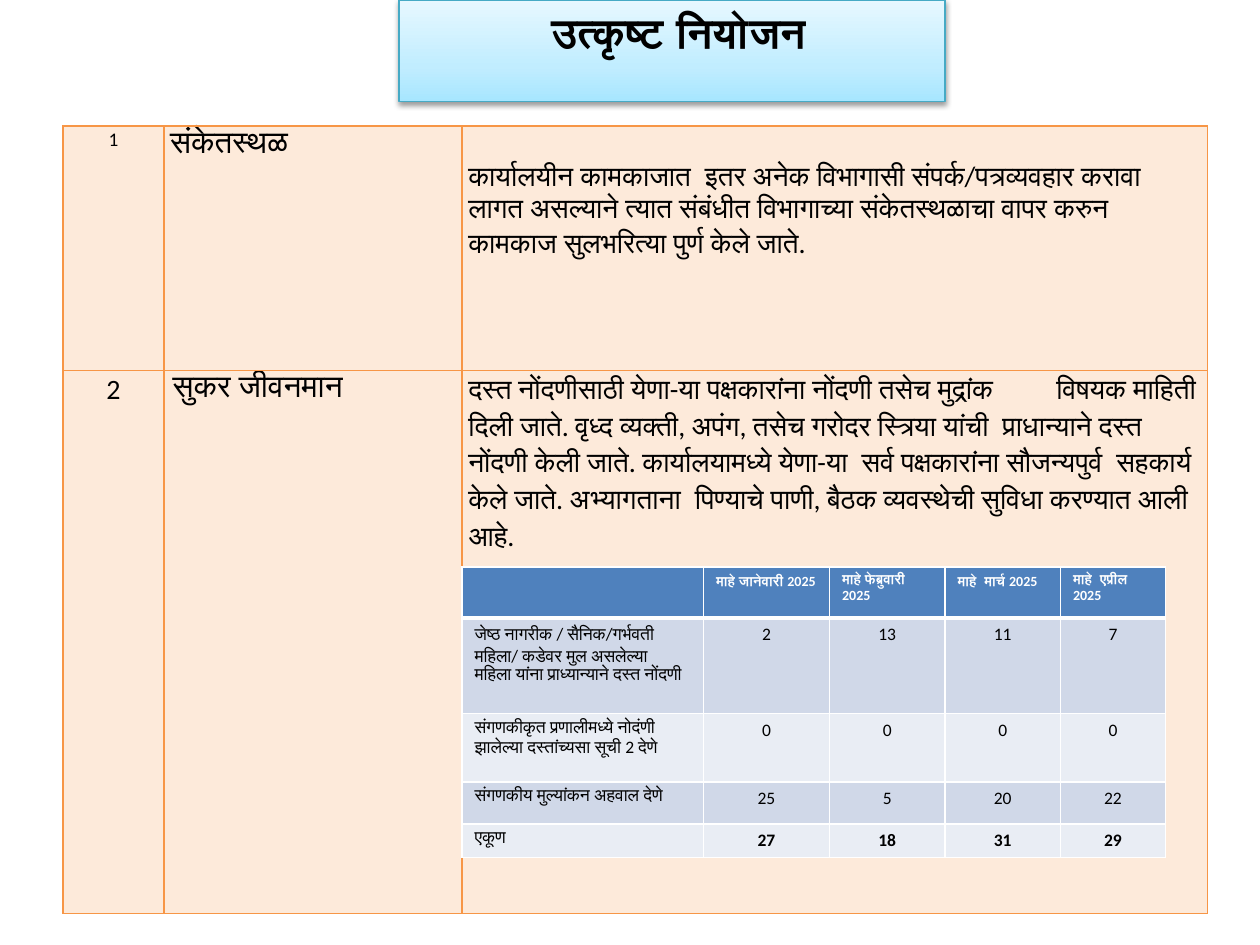
from copy import deepcopy

from lxml import etree
from pptx import Presentation
from pptx import util as u
from pptx.dml.color import RGBColor
from pptx.enum import shapes, text
from pptx.oxml import ns

BLACK = RGBColor(0x00, 0x00, 0x00)
WHITE = RGBColor(0xFF, 0xFF, 0xFF)
ORANGE = RGBColor(0xF7, 0x96, 0x46)
PEACH = RGBColor(0xFD, 0xEA, 0xDA)
BLUE = RGBColor(0x4F, 0x81, 0xBD)
BAND_DARK = RGBColor(0xD0, 0xD8, 0xE8)
BAND_LIGHT = RGBColor(0xE9, 0xED, 0xF4)
TEAL = RGBColor(0x46, 0xAA, 0xC5)
SKY_STOPS = [(0, RGBColor(0xA7, 0xE6, 0xFF)), (0.35, RGBColor(0xC1, 0xED, 0xFF)),
             (1, RGBColor(0xE7, 0xF8, 0xFF))]

CENTER = text.PP_ALIGN.CENTER
LEFT = text.PP_ALIGN.LEFT
COLUMNS, ROWS = 120, 90

TOPICS = [
    ["1", "संकेतस्थळ",
     "कार्यालयीन कामकाजात  इतर अनेक विभागासी संपर्क/पत्रव्यवहार करावा लागत असल्याने त्यात "
     "संबंधीत विभागाच्या संकेतस्थळाचा वापर करुन कामकाज सुलभरित्या पुर्ण केले जाते."],
    ["2", "सुकर जीवनमान",
     "दस्त नोंदणीसाठी येणा-या पक्षकारांना नोंदणी तसेच मुद्रांक\tविषयक माहिती दिली जाते. "
     "वृध्द व्यक्ती, अपंग, तसेच गरोदर स्त्रिया यांची  प्राधान्याने दस्त नोंदणी केली जाते. "
     "कार्यालयामध्ये येणा-या  सर्व पक्षकारांना सौजन्यपुर्व  सहकार्य केले जाते. "
     "अभ्यागताना  पिण्याचे पाणी, बैठक व्यवस्थेची सुविधा करण्यात आली आहे."],
]
MONTHS = [
    ["", "माहे जानेवारी 2025", "माहे फेब्रुवारी 2025", "माहे  मार्च 2025", "माहे  एप्रील 2025"],
    ["जेष्ठ नागरीक / सैनिक/गर्भवती महिला/ कडेवर मुल असलेल्या  महिला यांना "
     "प्राध्यान्याने दस्त नोंदणी", "2", "13", "11", "7"],
    ["संगणकीकृत प्रणालीमध्ये नोदंणी झालेल्या दस्तांच्यसा सूची 2 देणे", "0", "0", "0", "0"],
    ["संगणकीय मुल्यांकन अहवाल देणे", "25", "5", "20", "22"],
    ["एकूण", "27", "18", "31", "29"],
]


def assign(target, values):
    """Set every named attribute on the target."""
    for name, value in values.items():
        setattr(target, name, value)


def child(parent, tag, **attributes):
    """Append a drawing element with the given attributes."""
    return etree.SubElement(parent, ns.qn(tag), {k: str(v) for k, v in attributes.items()})


class Page:
    """Draws styled elements on one slide, measured in grid columns and rows."""

    def __init__(self, deck):
        self.deck = deck
        self.slide = deck.slides.add_slide(deck.slide_layouts[6])
        self.font = "Calibri"

    def across(self, columns):
        return round(self.deck.slide_width * columns / COLUMNS)

    def down(self, rows):
        return round(self.deck.slide_height * rows / ROWS)

    def area(self, left, top, width, height):
        return self.across(left), self.down(top), self.across(width), self.down(height)

    def label(self, frame, words, size, align=LEFT, bold=False, color=BLACK,
              font=None, spacing=None, tab=None):
        para = frame.paragraphs[0]
        assign(para, {"alignment": align, "line_spacing": spacing})
        if tab:
            stops = child(para._p.get_or_add_pPr(), "a:tabLst")
            child(stops, "a:tab", pos=self.across(tab), algn="l")
        span = para.add_run()
        span.text = words
        assign(span.font, {"name": font or self.font, "size": u.Pt(size), "bold": bold})
        span.font.color.rgb = color

    def title(self, words, *area):
        box = self.slide.shapes.add_shape(shapes.MSO_SHAPE.RECTANGLE, *self.area(*area))
        box.fill.gradient()
        box.fill.gradient_angle = 90
        stop_list = box._element.spPr.find(".//" + ns.qn("a:gsLst"))
        stop_list.append(deepcopy(stop_list[-1]))
        for stop, (position, color) in zip(box.fill.gradient_stops, SKY_STOPS):
            stop.position = position
            stop.color.rgb = color
        box.line.color.rgb = TEAL
        box.line.width = u.Pt(0.75)
        box.shadow.inherit = False
        effects = box._element.spPr.find(ns.qn("a:effectLst"))
        shadow = child(effects, "a:outerShdw", blurRad=u.Pt(3.1), dist=u.Pt(1.6),
                       dir=90 * 60000, rotWithShape=0)
        child(child(shadow, "a:srgbClr", val=BLACK), "a:alpha", val=38000)
        assign(box.text_frame, {"word_wrap": True, "margin_left": u.Inches(0.2),
                                "margin_bottom": u.Inches(0.35),
                                "vertical_anchor": text.MSO_ANCHOR.MIDDLE})
        self.label(box.text_frame, words, 24, CENTER, True, font="Arial")

    def table(self, left, top, widths, heights, content, style):
        area = self.area(left, top, sum(widths), sum(heights))
        grid = self.slide.shapes.add_table(len(heights), len(widths), *area).table
        assign(grid, {"first_row": False, "horz_banding": False})
        for column, width in zip(grid.columns, widths):
            column.width = self.across(width)
        for row, height in zip(grid.rows, heights):
            row.height = self.down(height)
        for r, row in enumerate(content):
            for c, words in enumerate(row):
                self.cell(grid.cell(r, c), words, **style(r, c))

    def cell(self, cell, words, fill, border, margins, thick=None, **look):
        properties = cell._tc.get_or_add_tcPr()
        for side in "LRTB":
            line = child(properties, "a:ln" + side, w=u.Pt(3 if side == thick else 1))
            child(child(line, "a:solidFill"), "a:srgbClr", val=border)
        cell.fill.solid()
        cell.fill.fore_color.rgb = fill
        assign(cell, margins)
        if words:
            self.label(cell.text_frame, words, **look)


def topic_style(r, c):
    """Give the look of a cell in the topic table."""
    margins = {"margin_left": u.Inches(0.07 if (r, c) == (1, 1) else 0.05),
               "margin_right": u.Inches(0.05), "margin_bottom": 0,
               "margin_top": u.Inches(0.25 if (r, c) == (0, 2) else 0)}
    return {"fill": PEACH, "border": ORANGE, "margins": margins, "spacing": 1.07,
            "size": [[11, 18, 16], [16, 18, 16]][r][c],
            "align": LEFT if c else CENTER, "tab": 56 if (r, c) == (1, 2) else None}


def month_style(r, c):
    """Give the look of a cell in the month table."""
    look = {"border": WHITE, "margins": {}}
    if r == 0:
        return {**look, "fill": BLUE, "thick": "B", "size": 8, "bold": True, "color": WHITE}
    return {**look, "fill": BAND_DARK if r % 2 else BAND_LIGHT, "size": 10,
            "thick": "T" if r == 1 else None,
            "align": CENTER if c else LEFT, "bold": r == 4 and c > 0}


def main():
    """Build the planning slide."""
    deck = Presentation()
    assign(deck, {"slide_width": u.Inches(10), "slide_height": u.Inches(7.5)})
    page = Page(deck)
    page.table(6, 12, [9.6, 28.4, 71], [23.3, 51.7], TOPICS, topic_style)
    page.title("उत्कृष्ट नियोजन", 38, 0, 52, 9.7)
    page.table(44, 54, [23, 12, 11, 11, 10], [4.8, 9.1, 6.5, 4, 3.2], MONTHS, month_style)
    deck.save("out.pptx")


if __name__ == "__main__":
    main()
